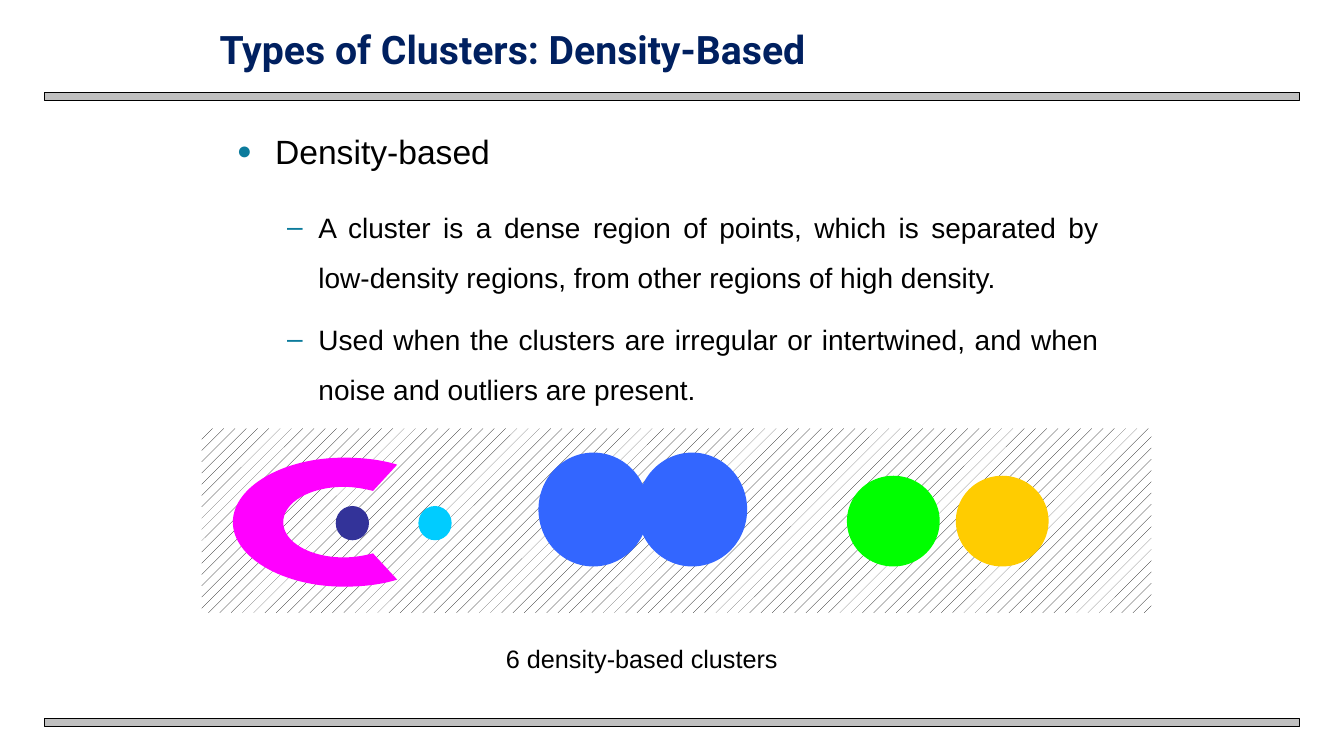
from dataclasses import dataclass

from lxml import etree
from pptx import Presentation
from pptx.dml.color import RGBColor
from pptx.enum.dml import MSO_PATTERN
from pptx.enum.shapes import MSO_SHAPE
from pptx.enum.text import MSO_ANCHOR, MSO_AUTO_SIZE, PP_ALIGN
from pptx.oxml.ns import qn
from pptx.util import Pt

RECT, OVAL = MSO_SHAPE.RECTANGLE, MSO_SHAPE.OVAL
DOTS = MSO_PATTERN.PERCENT_10
TOP, BOTTOM = MSO_ANCHOR.TOP, MSO_ANCHOR.BOTTOM
LEFT, JUSTIFY = PP_ALIGN.LEFT, PP_ALIGN.JUSTIFY
GROW = MSO_AUTO_SIZE.SHAPE_TO_FIT_TEXT
SCALE = 9144
MID = 518
OUTER = [(394, 461), (378, 456), (360, 454), (341, 454),
         (281, 454), (231, 483), (231, MID)]
INNER = [(370, 487), (362, 485), (352, 483), (341, 483),
         (308, 483), (281, 498), (281, MID)]


@dataclass(frozen=True)
class Theme:
    head_font: str = "Roboto"
    body_font: str = "Arial"
    head_size: int = 28
    body_size: int = 24
    sub_size: int = 20
    note_size: int = 18
    navy: str = "002060"
    black: str = "000000"
    white: str = "FFFFFF"
    gray: str = "C0C0C0"
    teal: str = "0C7B9C"
    indigo: str = "333399"
    pink: str = "FF00FF"
    cyan: str = "00CCFF"
    green: str = "00FF00"
    gold: str = "FFCC00"
    blue: str = "3366FF"


THEME = Theme()


def px(*vals):
    return [round(val * SCALE) for val in vals]


def rgb(code):
    return RGBColor.from_string(code)


def paint(shape, fill, line=None):
    shape.shadow.inherit = False
    shape.fill.solid()
    shape.fill.fore_color.rgb = rgb(fill)
    if line:
        shape.line.color.rgb = rgb(line)
        shape.line.width = Pt(1)
    else:
        shape.line.fill.background()


def add_bar(shapes, top):
    bar = shapes.add_shape(RECT, *px(44, top, 1245, 8))
    paint(bar, THEME.gray, THEME.black)


def add_noise(shapes):
    noise = shapes.add_shape(RECT, *px(200, 425, 942, 183))
    noise.shadow.inherit = False
    noise.fill.patterned()
    noise.fill.pattern = DOTS
    noise.fill.fore_color.rgb = rgb(THEME.black)
    noise.fill.back_color.rgb = rgb(THEME.white)
    noise.line.fill.background()


def add_disc(shapes, box, fill):
    paint(shapes.add_shape(OVAL, *px(*box)), fill)


def flip(half):
    return [(x, 2 * MID - y) for x, y in half]


def bend(lines):
    for first, *rest in zip(lines[::3], lines[1::3], lines[2::3]):
        first.tag = qn("a:cubicBezTo")
        for line in rest:
            first.append(line[0])
            line.getparent().remove(line)


def add_arch(shapes):
    inner = flip(INNER) + INNER[-2::-1]
    outer = OUTER + flip(OUTER)[-2::-1]
    start, *edge = [px(*point) for point in inner + outer]
    form = shapes.build_freeform(*start, scale=1.0)
    form.add_line_segments(edge, close=True)
    arch = form.convert_to_shape()
    lines = list(arch._element.iter(qn("a:lnTo")))
    bend(lines[:12])
    bend(lines[13:25])
    paint(arch, THEME.pink)


def add_box(shapes, box, anchor=TOP):
    frame = shapes.add_textbox(*px(*box)).text_frame
    frame.word_wrap = True
    frame.vertical_anchor = anchor
    return frame


def write(para, text, size, font=THEME.body_font, color=THEME.black,
          bold=False, align=LEFT, before=0, after=0, line=None):
    para.alignment = align
    para.space_before = Pt(before)
    para.space_after = Pt(after)
    if line:
        para.line_spacing = line
    run = para.add_run()
    run.text = text
    run.font.name = font
    run.font.size = Pt(size)
    run.font.bold = bold
    run.font.color.rgb = rgb(color)


def add_mark(para, char, left, hang, size=None):
    props = para._p.get_or_add_pPr()
    left, hang = px(left, hang)
    props.set("marL", str(left))
    props.set("indent", str(-hang))
    color = etree.SubElement(props, qn("a:buClr"))
    etree.SubElement(color, qn("a:srgbClr"), val=THEME.teal)
    if size:
        etree.SubElement(props, qn("a:buSzPct"), val=str(size * 1000))
    etree.SubElement(props, qn("a:buFont"), typeface=THEME.body_font)
    etree.SubElement(props, qn("a:buChar"), char=char)


def add_body(shapes):
    frame = add_box(shapes, (225, 125, 875, 559))
    para = frame.paragraphs[0]
    write(para, "Density-based", THEME.body_size, before=5, after=12)
    add_mark(para, "●", 38, 38, size=75)
    for text in (
        "A cluster is a dense region of points, which is separated by "
        "low-density regions, from other regions of high density.",
        "Used when the clusters are irregular or intertwined, and when "
        "noise and outliers are present.",
    ):
        para = frame.add_paragraph()
        para.level = 1
        write(para, text, THEME.sub_size, align=JUSTIFY,
              before=4, after=4, line=1.5)
        add_mark(para, "–", 81, 31)


def add_figure(shapes):
    parts = shapes.add_group_shape().shapes
    add_noise(parts)
    add_disc(parts, (333, 502, 33, 34), THEME.indigo)
    add_arch(parts)
    for box, fill in (
        ((415, 502, 33, 34), THEME.cyan),
        ((840, 472, 92, 90), THEME.green),
        ((948, 472, 92, 90), THEME.gold),
        ((534, 449, 109, 113), THEME.blue),
        ((632, 449, 109, 113), THEME.blue),
    ):
        add_disc(parts, box, fill)


def main():
    deck = Presentation()
    deck.slide_width, deck.slide_height = px(1333, 750)
    shapes = deck.slides.add_slide(deck.slide_layouts[6]).shapes
    for top in (92, 713):
        add_bar(shapes, top)
    title = add_box(shapes, (208, 17, 906, 60), BOTTOM)
    write(title.paragraphs[0], "Types of Clusters: Density-Based",
          THEME.head_size, font=THEME.head_font, color=THEME.navy,
          bold=True, line=Pt(36))
    add_body(shapes)
    add_figure(shapes)
    note = add_box(shapes, (492, 633, 350, 40))
    note.auto_size = GROW
    write(note.paragraphs[0], "6 density-based clusters",
          THEME.note_size, before=9)
    deck.save("out.pptx")


if __name__ == "__main__":
    main()
